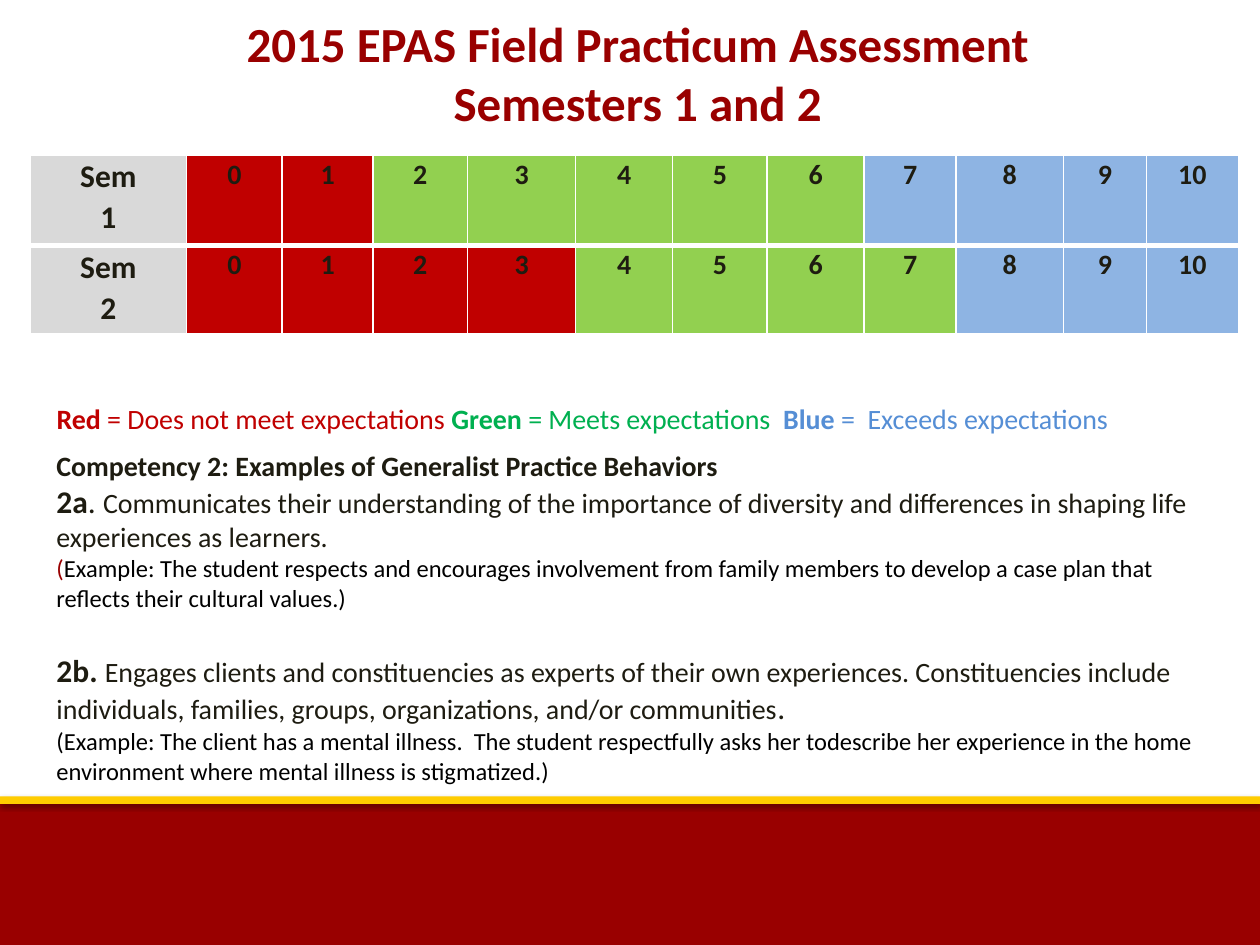
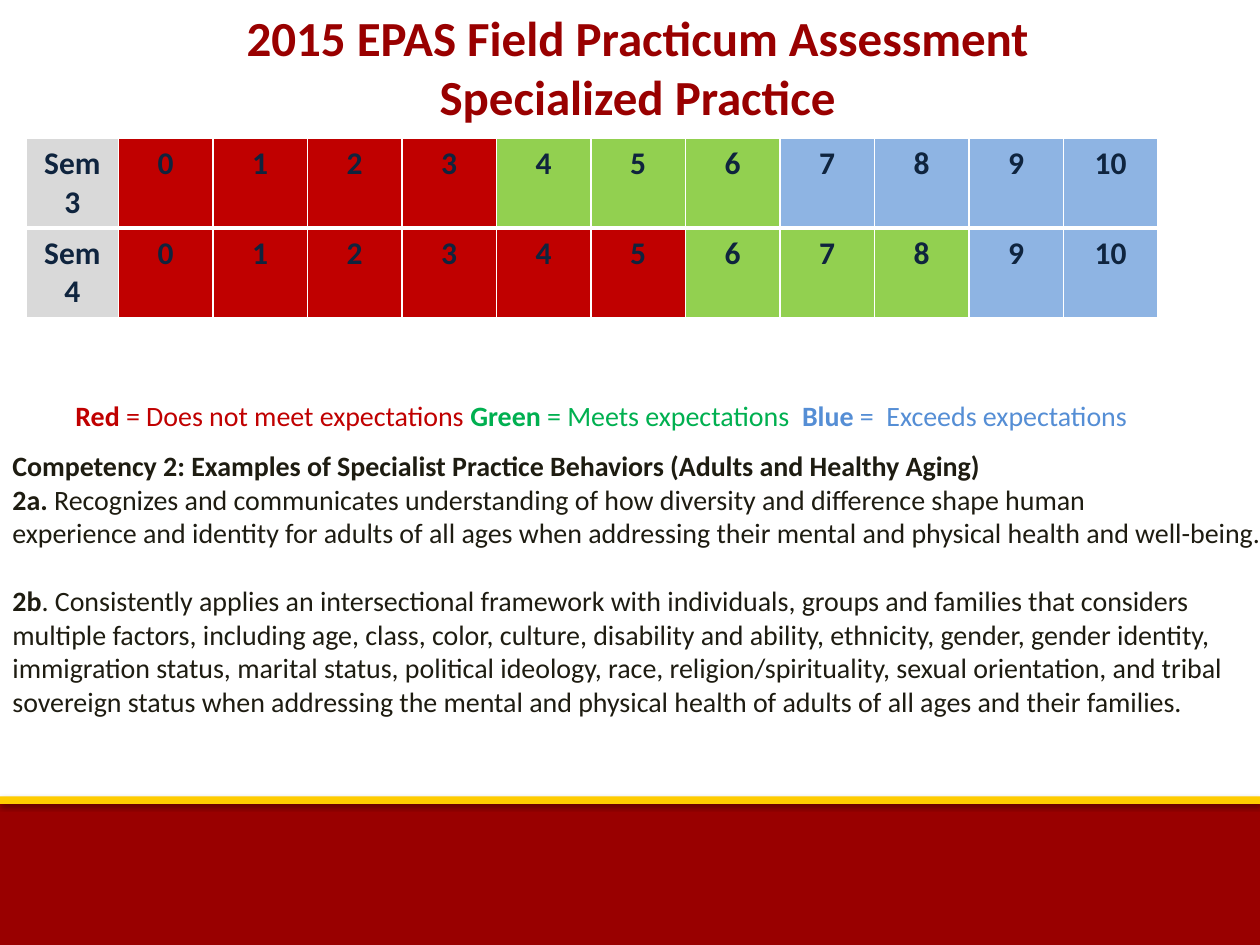
from dataclasses import dataclass

from lxml import etree
from pptx import Presentation
from pptx.dml.color import RGBColor
from pptx.enum.shapes import MSO_SHAPE
from pptx.enum.text import MSO_ANCHOR, MSO_AUTO_SIZE, PP_ALIGN
from pptx.oxml.ns import qn
from pptx.util import Inches, Pt


@dataclass(frozen=True)
class Theme:
    font: str = "Calibri"
    crimson: str = "990000"
    gold: str = "FFCC00"
    ink: str = "1E1C11"
    navy: str = "0F243E"
    black: str = "000000"
    white: str = "FFFFFF"
    label_fill: str = "D9D9D9"
    red: str = "C00000"
    green: str = "92D050"
    blue: str = "8EB4E3"
    green_text: str = "00B050"
    blue_text: str = "558ED5"
    title_size: int = 28
    large_size: int = 18
    body_size: int = 16
    example_size: int = 14


THEME = Theme()


@dataclass(frozen=True)
class Box:
    left: float
    top: float
    width: float
    height: float

    def lengths(self) -> list:
        return [Inches(n) for n in (self.left, self.top, self.width, self.height)]


@dataclass(frozen=True)
class Band:
    box: Box
    color: str
    shadow_opacity: int
    shadow_distance: float


@dataclass(frozen=True)
class Title:
    text: str
    box: Box
    top_inset: float = 0.05


@dataclass(frozen=True)
class Run:
    text: str
    bold: bool = False
    color: str | None = None
    size: int | None = None


@dataclass(frozen=True)
class Line:
    runs: list[Run]
    size: int = THEME.body_size
    color: str = THEME.ink
    line_spacing: float = 1.0
    space_before: float = 0
    indent: float = 0


@dataclass(frozen=True)
class Semester:
    label: str
    green_from: int
    blue_from: int

    def score_color(self, score: int) -> str:
        if score < self.green_from:
            return THEME.red
        return THEME.green if score < self.blue_from else THEME.blue


@dataclass(frozen=True)
class ScoreTable:
    left: float
    top: float
    column_widths: list[float]
    row_heights: list[float]
    semesters: list[Semester]
    color: str
    score_size: int
    side_inset: float
    top_inset: float
    line_spacing: float


@dataclass(frozen=True)
class TextBlock:
    box: Box
    lines: list[Line]
    wrap: bool = True


@dataclass(frozen=True)
class AssessmentSlide:
    title: Title
    table: ScoreTable
    blocks: list[TextBlock]


BANDS = [
    Band(Box(0, 6.35, 10, 1.15), THEME.crimson, 35, 1.8),
    Band(Box(0, 6.32, 10, 0.06), THEME.gold, 38, 1.6),
]

LEGEND = [
    Run("Red", True, THEME.red),
    Run(" = Does not meet expectations ", False, THEME.red),
    Run("Green", True, THEME.green_text),
    Run(" = Meets expectations  ", False, THEME.green_text),
    Run("Blue", True, THEME.blue_text),
    Run(" =  Exceeds expectations", False, THEME.blue_text),
]

GENERALIST_LINES = [
    Line([Run("Competency 2: Examples of Generalist Practice Behaviors", True)]),
    Line([
        Run("2a", True, size=THEME.large_size),
        Run(". ", size=THEME.large_size),
        Run("Communicates their understanding of the importance of diversity and "
            "differences in shaping life experiences as learners."),
    ]),
    Line([
        Run("(", color=THEME.crimson),
        Run("Example: The student respects and encourages involvement from family "
            "members to develop a case plan that reflects their cultural values.)"),
    ], THEME.example_size, THEME.black),
    Line([
        Run("2b. ", True, size=THEME.large_size),
        Run("Engages clients and constituencies as experts of their own experiences. "
            "Constituencies include individuals, families, groups, organizations, "
            "and/or communities"),
        Run(".", size=THEME.large_size),
    ], space_before=22),
    Line([
        Run("(Example: The client has a mental illness.  The student respectfully asks "
            "her todescribe her experience in the home environment where mental "
            "illness is stigmatized.)"),
    ], THEME.example_size, THEME.black),
]

SPECIALIST_LINES = [
    Line(LEGEND, line_spacing=1.5, indent=0.5),
    Line([Run("Competency 2: Examples of Specialist Practice Behaviors "
              "(Adults and Healthy Aging)", True)], line_spacing=1.5),
    Line([Run("2a. ", True),
          Run("Recognizes and communicates understanding of how diversity and "
              "difference shape human")]),
    Line([Run("experience and identity for adults of all ages when addressing their "
              "mental and physical health and well-being.")]),
    Line([Run("2b", True),
          Run(". Consistently applies an intersectional framework with individuals, "
              "groups and families that considers")], space_before=19.5),
    Line([Run("multiple factors, including age, class, color, culture, disability and "
              "ability, ethnicity, gender, gender identity,")]),
    Line([Run("immigration status, marital status, political ideology, race, "
              "religion/spirituality, sexual orientation, and tribal")]),
    Line([Run("sovereign status when addressing the mental and physical health of "
              "adults of all ages and their families.")]),
]

SLIDES = [
    AssessmentSlide(
        Title("2015 EPAS Field Practicum Assessment\vSemesters 1 and 2",
              Box(0.62, -0.35, 8.88, 1.42), top_inset=0.46),
        ScoreTable(
            0.24, 1.23,
            [1.24, 0.76, 0.72, 0.75, 0.86, 0.77, 0.75, 0.77, 0.73, 0.85, 0.66, 0.73],
            [0.72, 0.7],
            [Semester("Sem\n1", 2, 7), Semester("Sem\n2", 4, 8)],
            THEME.ink, THEME.body_size, 0.07, 0, 1.07),
        [TextBlock(Box(0.35, 3.51, 9.23, 2.86), GENERALIST_LINES),
         TextBlock(Box(0.35, 3.14, 8.89, 0.37), [Line(LEGEND)])],
    ),
    AssessmentSlide(
        Title("2015 EPAS Field Practicum Assessment\vSpecialized Practice",
              Box(0.56, 0.01, 9, 1.26)),
        ScoreTable(
            0.21, 1.1, [0.73] + [0.75] * 11, [0.7, 0.7],
            [Semester("Sem\n3", 4, 7), Semester("Sem\n4", 6, 9)],
            THEME.navy, THEME.large_size, 0.1, 0.05, 1.0),
        [TextBlock(Box(0, 2.98, 10.22, 2.79), SPECIALIST_LINES, wrap=False)],
    ),
]


def set_font(font, size: int, color: str, bold: bool) -> None:
    font.name = THEME.font
    font.size = Pt(size)
    font.bold = bold
    font.color.rgb = RGBColor.from_string(color)


def draw_band(slide, band: Band) -> None:
    shape = slide.shapes.add_shape(MSO_SHAPE.RECTANGLE, *band.box.lengths())
    shape.fill.solid()
    shape.fill.fore_color.rgb = RGBColor.from_string(band.color)
    shape.line.fill.background()
    # Soft shadow falling straight down
    effects = etree.SubElement(shape._element.spPr, qn("a:effectLst"))
    shadow = etree.SubElement(
        effects, qn("a:outerShdw"), blurRad=str(Pt(3.1)),
        dist=str(Pt(band.shadow_distance)), dir="5400000", rotWithShape="0")
    color = etree.SubElement(shadow, qn("a:srgbClr"), val=THEME.black)
    etree.SubElement(color, qn("a:alpha"), val=str(band.shadow_opacity * 1000))


def draw_title(slide, title: Title) -> None:
    shape = slide.shapes.title
    shape.left, shape.top, shape.width, shape.height = title.box.lengths()
    frame = shape.text_frame
    frame.auto_size = MSO_AUTO_SIZE.NONE
    frame.vertical_anchor = MSO_ANCHOR.TOP
    frame.margin_top = Inches(title.top_inset)
    paragraph = frame.paragraphs[0]
    paragraph.text = title.text
    paragraph.alignment = PP_ALIGN.CENTER
    set_font(paragraph.font, THEME.title_size, THEME.crimson, True)


def set_borders(cell, top: float, bottom: float) -> None:
    properties = cell._tc.get_or_add_tcPr()
    sides = (("a:lnL", 1), ("a:lnR", 1), ("a:lnT", top), ("a:lnB", bottom))
    for position, (tag, width) in enumerate(sides):
        line = etree.Element(qn(tag), w=str(Pt(width)))
        fill = etree.SubElement(line, qn("a:solidFill"))
        etree.SubElement(fill, qn("a:srgbClr"), val=THEME.white)
        properties.insert(position, line)


def draw_score_table(slide, scores: ScoreTable) -> None:
    box = Box(scores.left, scores.top, sum(scores.column_widths), sum(scores.row_heights))
    table = slide.shapes.add_table(
        len(scores.semesters), len(scores.column_widths), *box.lengths()).table
    table.first_row = table.horz_banding = False
    for column, width in zip(table.columns, scores.column_widths):
        column.width = Inches(width)
    for row_index, (row, semester) in enumerate(zip(table.rows, scores.semesters)):
        row.height = Inches(scores.row_heights[row_index])
        for column_index, cell in enumerate(row.cells):
            is_label = column_index == 0
            score = column_index - 1
            cell.text = semester.label if is_label else str(score)
            cell.margin_left = cell.margin_right = Inches(scores.side_inset)
            cell.margin_top = cell.margin_bottom = Inches(scores.top_inset)
            fill = THEME.label_fill if is_label else semester.score_color(score)
            cell.fill.solid()
            cell.fill.fore_color.rgb = RGBColor.from_string(fill)
            # A thick rule separates the two semesters
            set_borders(cell, *((1, 3) if row_index == 0 else (3, 1)))
            for paragraph in cell.text_frame.paragraphs:
                paragraph.alignment = PP_ALIGN.CENTER
                paragraph.line_spacing = scores.line_spacing
                size = THEME.large_size if is_label else scores.score_size
                set_font(paragraph.font, size, scores.color, True)


def draw_text_block(slide, block: TextBlock) -> None:
    frame = slide.shapes.add_textbox(*block.box.lengths()).text_frame
    frame.word_wrap = block.wrap
    frame.auto_size = MSO_AUTO_SIZE.SHAPE_TO_FIT_TEXT
    for index, line in enumerate(block.lines):
        paragraph = frame.add_paragraph() if index else frame.paragraphs[0]
        paragraph.line_spacing = line.line_spacing
        if line.space_before:
            paragraph.space_before = Pt(line.space_before)
        if line.indent:
            paragraph._p.get_or_add_pPr().set("marL", str(Inches(line.indent)))
        set_font(paragraph.font, line.size, line.color, False)
        for part in line.runs:
            run = paragraph.add_run()
            run.text = part.text
            if part.bold:
                run.font.bold = True
            if part.color:
                run.font.color.rgb = RGBColor.from_string(part.color)
            if part.size:
                run.font.size = Pt(part.size)


def main() -> None:
    presentation = Presentation()
    presentation.slide_width, presentation.slide_height = Inches(10), Inches(7.5)
    title_only = presentation.slide_layouts[5]
    for content in SLIDES:
        slide = presentation.slides.add_slide(title_only)
        for band in BANDS:
            draw_band(slide, band)
        draw_title(slide, content.title)
        draw_score_table(slide, content.table)
        for block in content.blocks:
            draw_text_block(slide, block)
    presentation.save("out.pptx")


if __name__ == "__main__":
    main()
